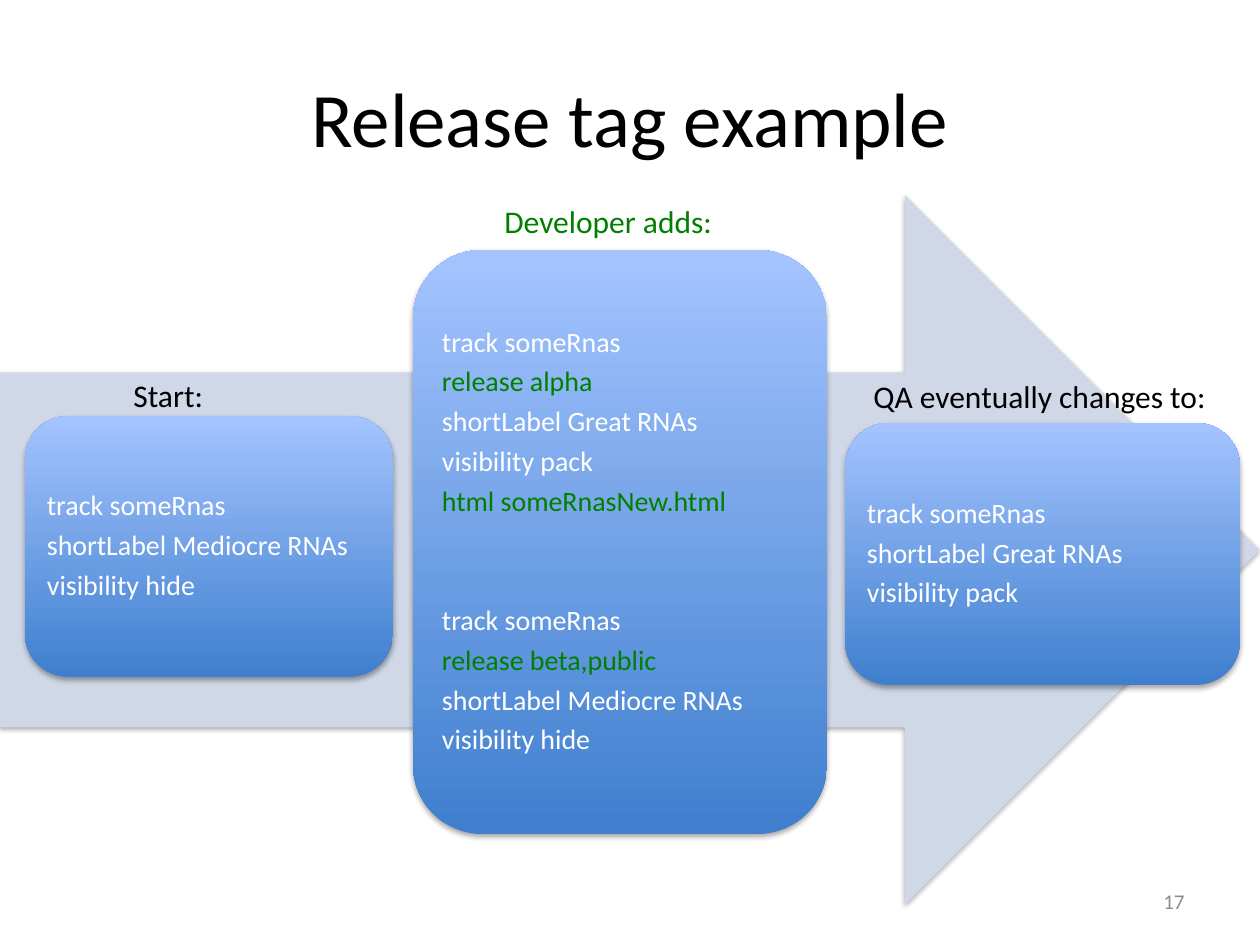
from lxml import etree
from pptx import Presentation
from pptx.dml.color import RGBColor
from pptx.enum.shapes import MSO_SHAPE
from pptx.enum.text import MSO_ANCHOR, PP_ALIGN
from pptx.oxml.ns import qn
from pptx.util import Emu, Pt

ARROW = MSO_SHAPE.RIGHT_ARROW
ROUND = MSO_SHAPE.ROUNDED_RECTANGLE
TOP, MIDDLE = MSO_ANCHOR.TOP, MSO_ANCHOR.MIDDLE
LEFT, CENTER, RIGHT = PP_ALIGN.LEFT, PP_ALIGN.CENTER, PP_ALIGN.RIGHT
BLACK, WHITE, GREEN, GRAY = "000000", "FFFFFF", "008000", "8C8C8C"
PALE, DARK, LIGHT = "D0D8E8", "3F7FCE", "A4C4FF"


def px(n):
    return Emu(round(n * 914400 / 126))


def color(code):
    return RGBColor.from_string(code)


def write(para, text, size=16, ink=WHITE, align=LEFT, line=1.0, before=0, after=0):
    para.alignment = align
    para.line_spacing = line
    para.space_before = Pt(before)
    para.space_after = Pt(after)
    run = para.add_run()
    run.text = text
    run.font.name = "Calibri"
    run.font.size = Pt(size)
    run.font.color.rgb = color(ink)


class Deck:
    def __init__(self):
        self.file = Presentation()
        self.file.slide_width, self.file.slide_height = px(1260), px(945)
        self.slide = self.file.slides.add_slide(self.file.slide_layouts[6])

    def shape(self, kind, box):
        item = self.slide.shapes.add_shape(kind, *map(px, box))
        item.line.fill.background()
        item.shadow.inherit = False
        effects = item._element.spPr.find(qn("a:effectLst"))
        shade = etree.SubElement(effects, qn("a:outerShdw"), blurRad=str(Pt(3.1)),
                                 dist=str(Pt(1.8)), dir="5400000", rotWithShape="0")
        tint = etree.SubElement(shade, qn("a:srgbClr"), val=BLACK)
        etree.SubElement(tint, qn("a:alpha"), val="35000")
        return item

    def arrow(self, box):
        fill = self.shape(ARROW, box).fill
        fill.solid()
        fill.fore_color.rgb = color(PALE)

    def text(self, box, text, anchor=TOP, wrap=True, **style):
        frame = self.frame(box, anchor, wrap)
        write(frame.paragraphs[0], text, **style)

    def frame(self, box, anchor, wrap=True):
        frame = self.slide.shapes.add_textbox(*map(px, box)).text_frame
        frame.word_wrap = wrap
        frame.vertical_anchor = anchor
        return frame

    def card(self, box, inset, blocks):
        fill = self.shape(ROUND, box).fill
        fill.gradient()
        fill.gradient_angle = 90
        for stop, code in zip(fill.gradient_stops, (DARK, LIGHT)):
            stop.color.rgb = color(code)
        x, y, w, h = box
        frame = self.frame((x + inset, y + inset, w - 2 * inset, h - 2 * inset), MIDDLE)
        frame.margin_left = frame.margin_right = px(9)
        frame.margin_top = frame.margin_bottom = px(9)
        para = frame.paragraphs[0]
        for i, block in enumerate(blocks):
            for j, (text, ink) in enumerate(block):
                if i or j:
                    para = frame.add_paragraph()
                gap = 45.7 if i and not j else 0
                write(para, text, ink=ink, line=0.9, before=gap, after=5.4)


def track(label, show, release=None, page=None):
    rows = [("track someRnas", WHITE)]
    if release:
        rows.append(("release " + release, GREEN))
    rows += [("shortLabel " + label, WHITE), ("visibility " + show, WHITE)]
    if page:
        rows.append(("html " + page, GREEN))
    return rows


def main():
    deck = Deck()
    old, new = ("Mediocre RNAs", "hide"), ("Great RNAs", "pack")
    deck.text((63, 38, 1134, 157), "Release tag example", MIDDLE,
              size=44, ink=BLACK, align=CENTER)
    deck.arrow((0, 195, 1260, 710))
    deck.card((25, 416, 368, 261), 13, [track(*old)])
    deck.card((413, 250, 414, 584), 20,
              [track(*new, "alpha", "someRnasNew.html"), track(*old, "beta,public")])
    deck.card((845, 423, 395, 262), 13, [track(*new)])
    for box, text, ink in (
        ((121, 370, 96, 50), "Start:", BLACK),
        ((492, 196, 235, 50), "Developer adds:", GREEN),
        ((861, 371, 362, 50), "QA eventually changes to:", BLACK),
    ):
        deck.text(box, text, wrap=False, size=18, ink=ink)
    deck.text((903, 876, 294, 50), "17", MIDDLE, size=12, ink=GRAY, align=RIGHT)
    deck.file.save("out.pptx")


if __name__ == "__main__":
    main()
